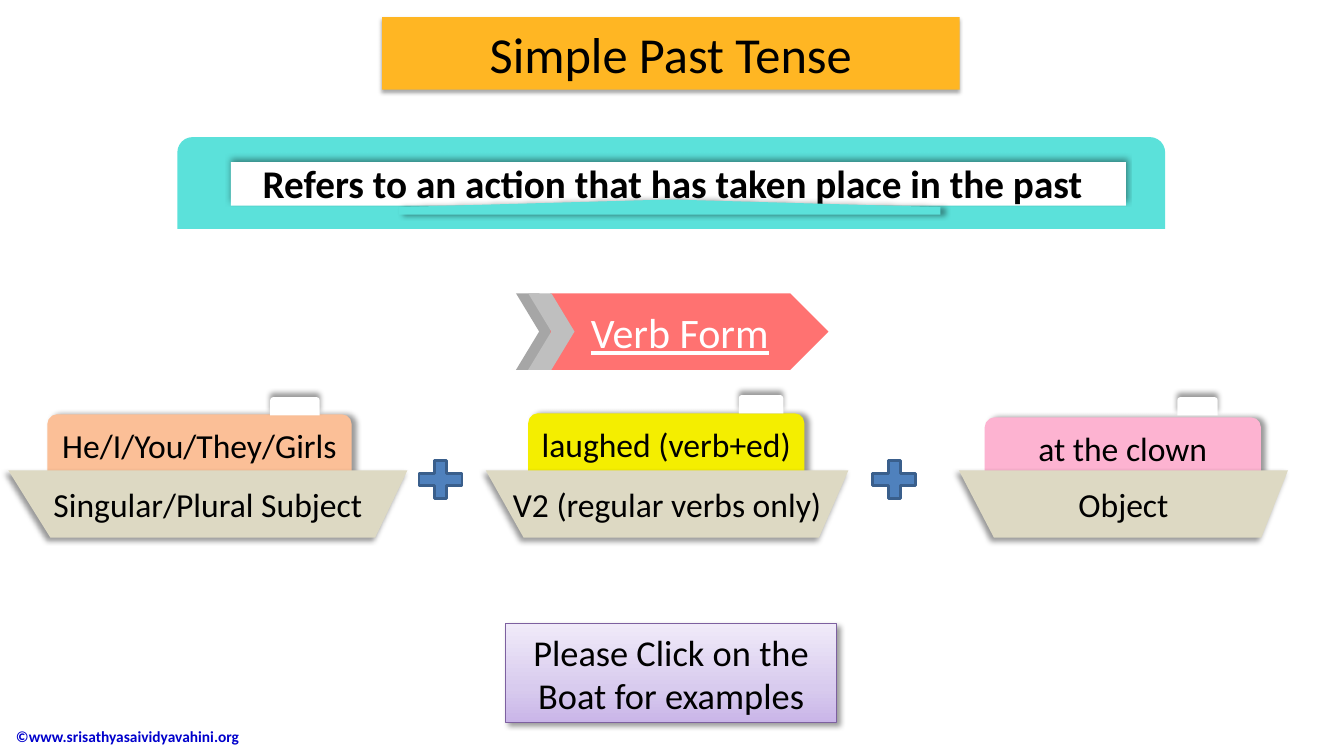
from lxml import etree
from pptx import Presentation
from pptx.dml.color import RGBColor
from pptx.enum.shapes import MSO_SHAPE
from pptx.enum.text import MSO_ANCHOR, PP_ALIGN
from pptx.oxml.ns import qn
from pptx.util import Pt

RECT, PLATE, CHEVRON = MSO_SHAPE.RECTANGLE, MSO_SHAPE.PENTAGON, MSO_SHAPE.CHEVRON
ROUND_TOP, PLUS = MSO_SHAPE.ROUND_2_SAME_RECTANGLE, MSO_SHAPE.MATH_PLUS
TOP, MIDDLE = MSO_ANCHOR.TOP, MSO_ANCHOR.MIDDLE
LEFT, CENTER = PP_ALIGN.LEFT, PP_ALIGN.CENTER

BLACK, WHITE = RGBColor(0, 0, 0), RGBColor(255, 255, 255)
ORANGE = RGBColor(0xFF, 0xB6, 0x23)
TURQUOISE = RGBColor(0x5B, 0xE1, 0xDA)
CORAL = RGBColor(0xFF, 0x72, 0x71)
DARK_GRAY, LIGHT_GRAY = RGBColor(0xA6, 0xA6, 0xA6), RGBColor(0xBF, 0xBF, 0xBF)
PEACH, YELLOW = RGBColor(0xFB, 0xBF, 0x97), RGBColor(0xF4, 0xEE, 0x00)
PINK, SAND = RGBColor(0xFD, 0xB3, 0xD1), RGBColor(0xDD, 0xD9, 0xC3)
BLUE, BLUE_EDGE = RGBColor(0x4F, 0x81, 0xBD), RGBColor(0x3A, 0x5F, 0x8C)
PURPLE, LINK_BLUE = RGBColor(0x7D, 0x60, 0xA0), RGBColor(0, 0, 0xCC)

# Content
TITLE = "Simple Past Tense"
MEANING = "Refers to an action that has taken place in the past"
VERB_FORM = "Verb Form"
BUTTON = "Please Click on the Boat for examples"
COPYRIGHT = "©www.srisathyasaividyavahini.org"
BUTTON_STOPS = [(0, "C9B5E8"), (35, "D8CBEE"), (100, "F0EAF9")]
# cabin and funnel: left, top, width; hull: top left, top right, bottom right, bottom left
BOATS = [
    dict(cabin="He/I/You/They/Girls", hull="Singular/Plural Subject", color=PEACH,
         cabin_box=(33.8, 295.9, 217.4), funnel_box=(193, 283.7, 35.3),
         hull_x=(5.8, 290.9, 267.8, 36)),
    dict(cabin="laughed (verb+ed)", hull="V2 (regular verbs only)", color=YELLOW,
         cabin_box=(377.3, 295.2, 197.3), funnel_box=(527.8, 282.2, 31.7),
         hull_x=(347, 606.2, 585.4, 374.4)),
    dict(cabin="at the clown", hull="Object", color=PINK,
         cabin_box=(703.4, 298.1, 197.3), funnel_box=(841, 283.7, 28.8),
         hull_x=(684.7, 920.2, 900.7, 709.9)),
]
CABIN_H, FUNNEL_H = 42.5, 13
DECK_Y, KEEL_Y = 335.5, 384.5
PLUS_X = (293.8, 617.8)

prs = Presentation()
prs.slide_width, prs.slide_height = Pt(960), Pt(540)
s = prs.slides.add_slide(prs.slide_layouts[6])


def style(sp, fill, shadow=None, alpha=40, blur=4, dist=3):
    """Plain fill, no outline; shadow is its direction in degrees."""
    sp.fill.solid()
    sp.fill.fore_color.rgb = fill
    sp.line.fill.background()
    sp.shadow.inherit = False
    if shadow is not None:
        effects = sp._element.spPr.find(qn("a:effectLst"))
        outer = etree.SubElement(effects, qn("a:outerShdw"), blurRad=str(Pt(blur)),
                                 dist=str(Pt(dist)), dir=str(shadow * 60000),
                                 algn="ctr", rotWithShape="0")
        color = etree.SubElement(outer, qn("a:srgbClr"), val="000000")
        etree.SubElement(color, qn("a:alpha"), val=str(alpha * 1000))
    return sp


def shape(kind, box, fill, shadow=None, **kw):
    return style(s.shapes.add_shape(kind, *map(Pt, box)), fill, shadow, **kw)


def write(sp, text, size, color=BLACK, align=CENTER, anchor=MIDDLE, wrap=True,
          bold=False, underline=False):
    tf = sp.text_frame
    tf.word_wrap = wrap
    tf.vertical_anchor = anchor
    p = tf.paragraphs[0]
    p.text = text
    p.alignment = align
    f = p.font
    f.name, f.size, f.bold, f.underline = "Calibri", Pt(size), bold, underline
    f.color.rgb = color


# Copyright line
write(s.shapes.add_textbox(Pt(4.3), Pt(511.2), Pt(290), Pt(29.5)),
      COPYRIGHT, 11, LINK_BLUE, align=LEFT, bold=True)

# Meaning banner
shape(ROUND_TOP, (126.7, 97.9, 705.6, 65.5), TURQUOISE)
shape(RECT, (164.9, 115.9, 639.4, 31), WHITE, 270)
write(s.shapes.add_textbox(Pt(163.4), Pt(110.2), Pt(633.6), Pt(82.8)),
      MEANING, 28, anchor=TOP, bold=True)
ridge = shape(PLATE, (473, -45.4, 10.8, 386.6), TURQUOISE, 0)
ridge.rotation = 270

# Verb form arrow
shape(CHEVRON, (368.6, 209.5, 33.1, 54.7), DARK_GRAY)
write(shape(PLATE, (393.1, 209.5, 198.7, 54.7), CORAL), VERB_FORM, 30, WHITE,
      underline=True)
shape(CHEVRON, (377.3, 209.5, 33.1, 54.7), LIGHT_GRAY)

# Boats
for boat in BOATS:
    cabin = shape(ROUND_TOP, (*boat["cabin_box"], CABIN_H), boat["color"], 0)
    write(cabin, boat["cabin"], 24, wrap=False)
    shape(ROUND_TOP, (*boat["funnel_box"], FUNNEL_H), WHITE, 270)
    corners = list(zip(boat["hull_x"], (DECK_Y, DECK_Y, KEEL_Y, KEEL_Y)))
    outline = s.shapes.build_freeform(*corners[0], scale=float(Pt(1)))
    outline.add_line_segments(corners[1:], close=True)
    hull = style(outline.convert_to_shape(), SAND, 135)
    write(hull, boat["hull"], 24, wrap=False)

# Plus signs
for x in PLUS_X:
    plus = shape(PLUS, (x, 324, 41.8, 36.7), BLUE)
    plus.line.color.rgb = BLUE_EDGE
    plus.line.width = Pt(2)

# Button
button = shape(RECT, (361.4, 445.7, 236.2, 70.6), WHITE, 45)
button.fill.gradient()
button.fill.gradient_angle = 90
stops = button._element.spPr.find(".//" + qn("a:gsLst"))
for stop in list(stops):
    stops.remove(stop)
for pos, color in BUTTON_STOPS:
    stop = etree.SubElement(stops, qn("a:gs"), pos=str(pos * 1000))
    etree.SubElement(stop, qn("a:srgbClr"), val=color)
button.line.color.rgb = PURPLE
button.line.width = Pt(0.75)
write(button, BUTTON, 26)

# Title
write(shape(RECT, (272.9, 12.2, 412.6, 51.8), ORANGE, 90, alpha=35, blur=3.1, dist=1.8),
      TITLE, 36)

prs.save("out.pptx")
